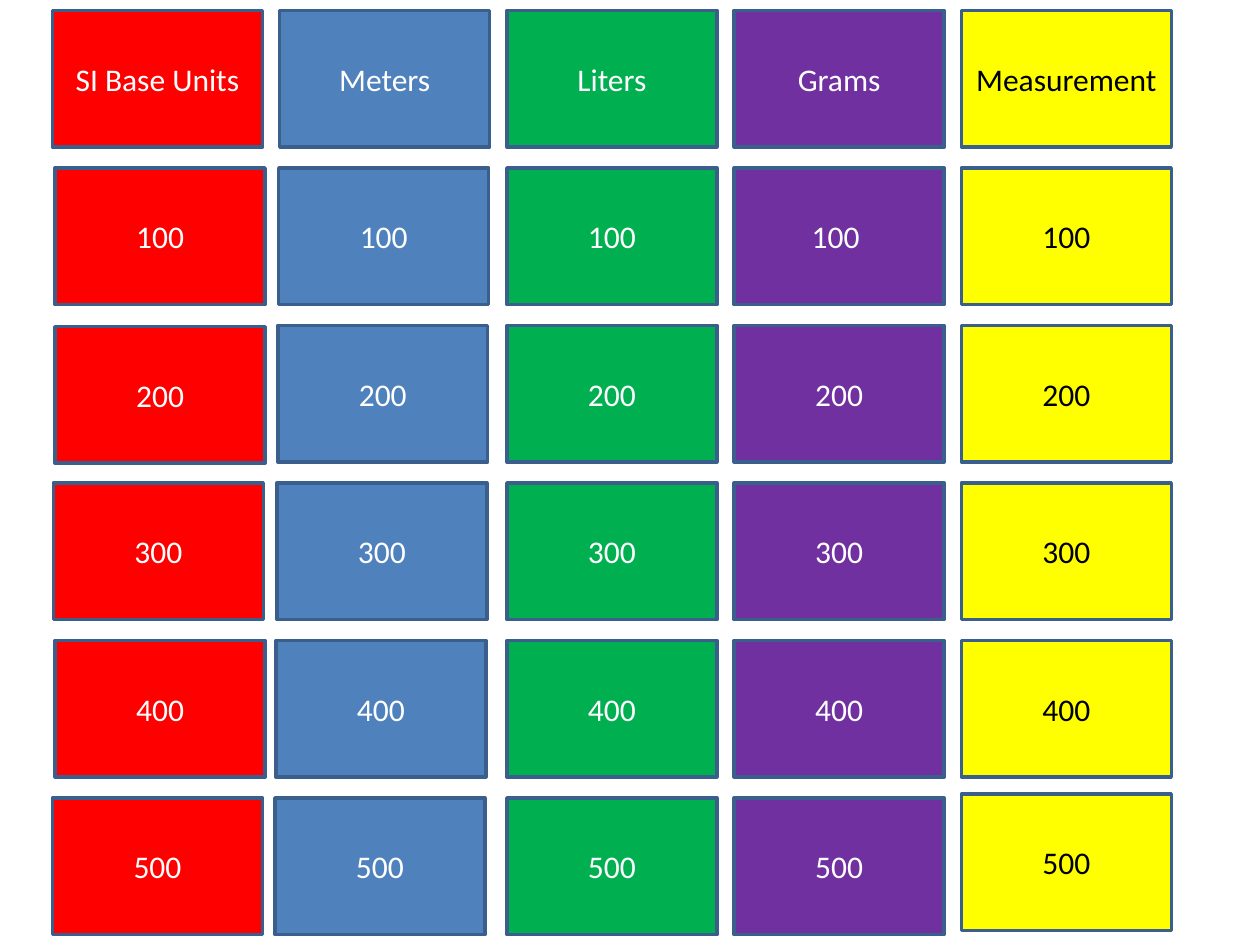
from dataclasses import dataclass

from pptx import Presentation
from pptx.dml.color import RGBColor
from pptx.enum.shapes import MSO_SHAPE
from pptx.enum.text import MSO_ANCHOR, PP_ALIGN
from pptx.slide import Slide
from pptx.util import Pt

RECTANGLE = MSO_SHAPE.RECTANGLE
MIDDLE = MSO_ANCHOR.MIDDLE
CENTER = PP_ALIGN.CENTER


@dataclass(frozen=True)
class Theme:
    red: str = "FF0000"
    blue: str = "4F81BD"
    green: str = "00B050"
    purple: str = "7030A0"
    yellow: str = "FFFF00"
    white: str = "FFFFFF"
    black: str = "000000"
    border: str = "3A5F8C"
    border_width: float = 2
    font: str = "Calibri"
    text_size: float = 18


@dataclass(frozen=True)
class Category:
    title: str
    fill: str
    text_color: str
    shifts: tuple[float, ...] = (0,) * 6  # sideways nudge of each row


@dataclass(frozen=True)
class Tile:
    text: str
    left: float
    top: float
    fill: str
    text_color: str


THEME = Theme()

# Board grid, in points
LEFT, TOP = 30, 6
TILE_WIDTH, TILE_HEIGHT = 120, 78
COLUMN_STEP, ROW_STEP = 129.84, 90

CATEGORIES = (
    Category("SI Base Units", THEME.red, THEME.white, (0, 1.5, 1.5, 0.5, 1.5, 0)),
    Category("Meters", THEME.blue, THEME.white,
             tuple(-0.55 * row for row in range(6))),
    Category("Liters", THEME.green, THEME.white),
    Category("Grams", THEME.purple, THEME.white),
    Category("Measurement", THEME.yellow, THEME.black),
)
POINT_VALUES = ("100", "200", "300", "400", "500")

# Single tiles that differ, keyed by (category title, row)
VERTICAL_SHIFTS = {("SI Base Units", 2): 0.7, ("Measurement", 5): -2.2}
LABELS = {("Grams", 1): "100 "}


def add_tile(slide: Slide, tile: Tile) -> None:
    shape = slide.shapes.add_shape(
        RECTANGLE, Pt(tile.left), Pt(tile.top), Pt(TILE_WIDTH), Pt(TILE_HEIGHT))
    shape.shadow.inherit = False
    shape.fill.solid()
    shape.fill.fore_color.rgb = RGBColor.from_string(tile.fill)
    shape.line.color.rgb = RGBColor.from_string(THEME.border)
    shape.line.width = Pt(THEME.border_width)

    # Centred label
    text_frame = shape.text_frame
    text_frame.word_wrap = True
    text_frame.vertical_anchor = MIDDLE
    paragraph = text_frame.paragraphs[0]
    paragraph.text = tile.text
    paragraph.alignment = CENTER
    paragraph.font.name = THEME.font
    paragraph.font.size = Pt(THEME.text_size)
    paragraph.font.color.rgb = RGBColor.from_string(tile.text_color)


def add_category(slide: Slide, column: int, category: Category) -> None:
    for row, text in enumerate((category.title, *POINT_VALUES)):
        key = (category.title, row)
        add_tile(slide, Tile(
            text=LABELS.get(key, text),
            left=LEFT + column * COLUMN_STEP + category.shifts[row],
            top=TOP + row * ROW_STEP + VERTICAL_SHIFTS.get(key, 0),
            fill=category.fill,
            text_color=category.text_color,
        ))


def main() -> None:
    presentation = Presentation()
    presentation.slide_width = Pt(720)
    presentation.slide_height = Pt(540)
    slide = presentation.slides.add_slide(presentation.slide_layouts[6])

    # One column of tiles for each category
    for column, category in enumerate(CATEGORIES):
        add_category(slide, column, category)

    presentation.save("out.pptx")


if __name__ == "__main__":
    main()
